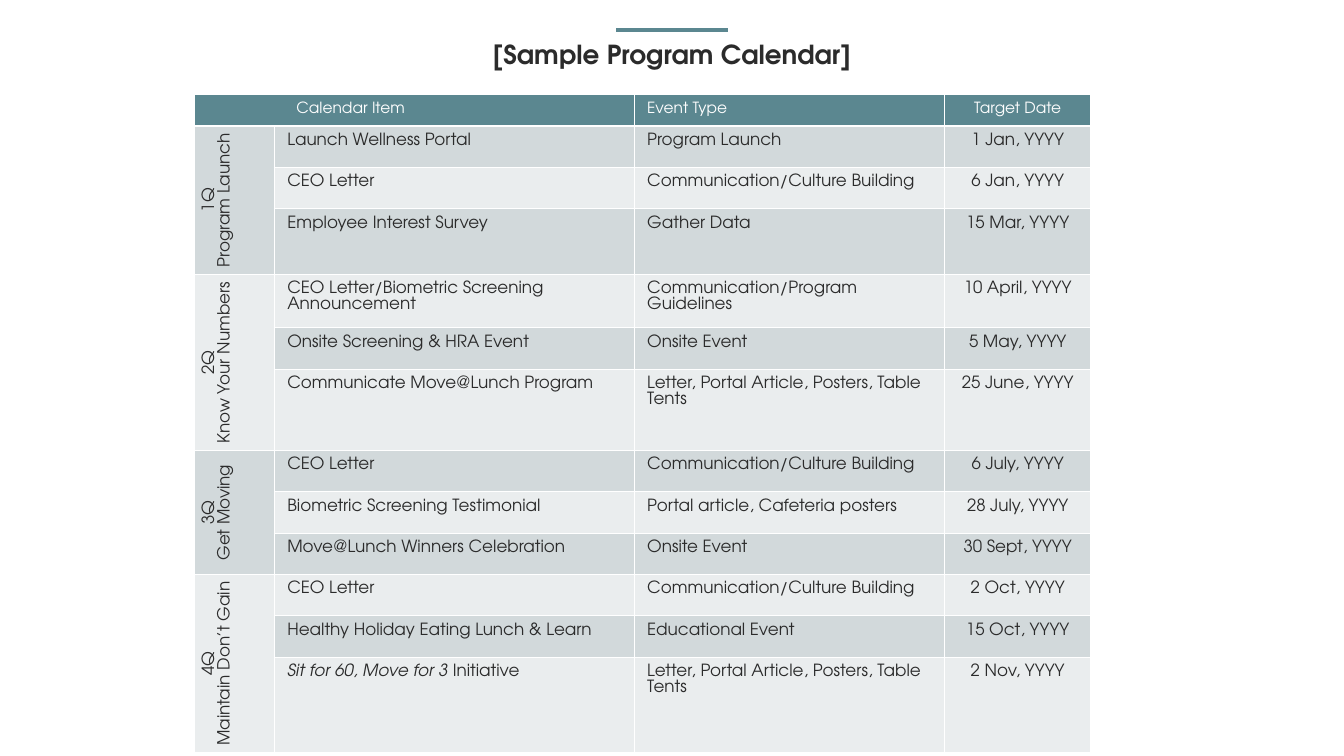
"""Build a one-slide wellness program calendar, grouped by quarter."""
from dataclasses import dataclass

from pptx import Presentation
from pptx.dml.color import RGBColor as RGB
from pptx.enum.shapes import MSO_CONNECTOR as CONN
from pptx.enum.text import MSO_ANCHOR as ANCHOR, PP_ALIGN as ALIGN
from pptx.oxml import parse_xml
from pptx.oxml.ns import nsdecls
from pptx.util import Inches, Pt

TITLE = "[Sample Program Calendar]"
HEADERS = ["Calendar Item", "Event Type", "Target Date"]
CULTURE = "Communication/Culture Building"
MEDIA = "Letter, Portal Article, Posters, Table Tents"
QUARTERS = [
    (["1Q", "Program Launch"], [
        ("Launch Wellness Portal", "Program Launch", "1 Jan, YYYY"),
        ("CEO Letter", CULTURE, "6 Jan, YYYY"),
        ("Employee Interest Survey", "Gather Data", "15 Mar, YYYY")]),
    (["2Q", "Know Your Numbers"], [
        ("CEO Letter/Biometric Screening Announcement",
         "Communication/Program Guidelines", "10 April, YYYY"),
        ("Onsite Screening & HRA Event", "Onsite Event", "5 May, YYYY"),
        ("Communicate Move@Lunch Program", MEDIA, "25 June, YYYY")]),
    (["3Q", "Get Moving"], [
        ("CEO Letter", CULTURE, "6 July, YYYY"),
        ("Biometric Screening Testimonial", "Portal article, Cafeteria posters",
         "28 July, YYYY"),
        ("Move@Lunch Winners Celebration", "Onsite Event", "30 Sept, YYYY")]),
    (["4Q", "Maintain Don’t Gain"], [
        ("CEO Letter", CULTURE, "2 Oct, YYYY"),
        ("Healthy Holiday Eating Lunch & Learn", "Educational Event", "15 Oct, YYYY"),
        ("*Sit for 60, Move for 3* Initiative", MEDIA, "2 Nov, YYYY")]),
]
COLS = [0.79, 3.57, 3.08, 1.45]
HEADER_H, ROW_H, TALL_H = 0.31, 0.41, 0.53
TALL_TEXT = 38
ALIGNS = [ALIGN.LEFT, ALIGN.LEFT, ALIGN.CENTER]


@dataclass(frozen=True)
class Theme:
    font: str = "TeX Gyre Adventor"
    teal: RGB = RGB(0x5B, 0x87, 0x90)
    ink: RGB = RGB(0x2B, 0x2B, 0x2B)
    white: RGB = RGB(0xFF, 0xFF, 0xFF)
    bands: tuple = (RGB(0xD2, 0xD9, 0xDB), RGB(0xEA, 0xED, 0xEE))
    title: float = 18.7
    header: float = 11
    body: float = 12
    leading: float = 0.93


T = Theme()


def write(p, text, size, color, align, bold=False):
    """Write text into a paragraph; parts between asterisks are italic."""
    for i, part in enumerate(text.split("*")):
        if part:
            r = p.add_run()
            r.text = part
            if i % 2:
                r.font.italic = True
    p.alignment = align
    f = p.font
    f.name, f.size, f.bold, f.color.rgb = T.font, Pt(size), bold, color


def fill_cell(cell, lines, fill, size=T.body, color=T.ink, align=ALIGN.LEFT, side=0.13):
    """Fill one table cell with lines of text."""
    cell.fill.solid()
    cell.fill.fore_color.rgb = fill
    cell.margin_left = cell.margin_right = Inches(side)
    cell.margin_top = cell.margin_bottom = Inches(0.07)
    tf = cell.text_frame
    for i, line in enumerate(lines):
        p = tf.add_paragraph() if i else tf.paragraphs[0]
        write(p, line, size, color, align)
        p.line_spacing = Pt(size * T.leading)


def add_heading(s, width):
    """Add the accent rule and the title, both centred on the slide."""
    mid, half, y = width / 2, 0.555, Inches(0.3)
    rule = s.shapes.add_connector(CONN.STRAIGHT, Inches(mid - half), y, Inches(mid + half), y)
    rule.line.color.rgb, rule.line.width = T.teal, Pt(3)
    rule._element.spPr.append(parse_xml(f"<a:effectLst {nsdecls('a')}/>"))
    box = s.shapes.add_textbox(Inches(mid - 6), Inches(0.31), Inches(12), Inches(0.46))
    tf = box.text_frame
    tf.word_wrap, tf.vertical_anchor = True, ANCHOR.MIDDLE
    write(tf.paragraphs[0], TITLE, T.title, T.ink, ALIGN.CENTER, bold=True)


def add_calendar(s):
    """Add the calendar table with one merged label cell per quarter."""
    events = [e for _, rows in QUARTERS for e in rows]
    heights = [HEADER_H] + [TALL_H if max(map(len, e)) > TALL_TEXT else ROW_H for e in events]
    table = s.shapes.add_table(len(heights), len(COLS), Inches(1.93), Inches(0.94),
                               Inches(sum(COLS)), Inches(sum(heights))).table
    for col, w in zip(table.columns, COLS):
        col.width = Inches(w)
    for row, h in zip(table.rows, heights):
        row.height = Inches(h)

    table.cell(0, 0).merge(table.cell(0, 1))
    for c, text, align in zip((0, 2, 3), HEADERS, ALIGNS):
        fill_cell(table.cell(0, c), [text], T.teal, T.header, T.white, align)
    table.cell(0, 0).margin_left = Inches(1.01)

    for i, event in enumerate(events):
        for c, (text, align) in enumerate(zip(event, ALIGNS), 1):
            fill_cell(table.cell(i + 1, c), [text], T.bands[i % 2], align=align)

    top = 1
    for label, rows in QUARTERS:
        cell = table.cell(top, 0)
        cell.merge(table.cell(top + len(rows) - 1, 0))
        fill_cell(cell, label, T.bands[(top - 1) % 2], align=ALIGN.CENTER, side=0.07)
        cell._tc.get_or_add_tcPr().set("vert", "vert270")
        top += len(rows)


def main():
    prs = Presentation()
    prs.slide_width, prs.slide_height = Inches(13.33), Inches(7.5)
    s = prs.slides.add_slide(prs.slide_layouts[6])
    add_heading(s, 13.33)
    add_calendar(s)
    prs.save("out.pptx")


if __name__ == "__main__":
    main()
